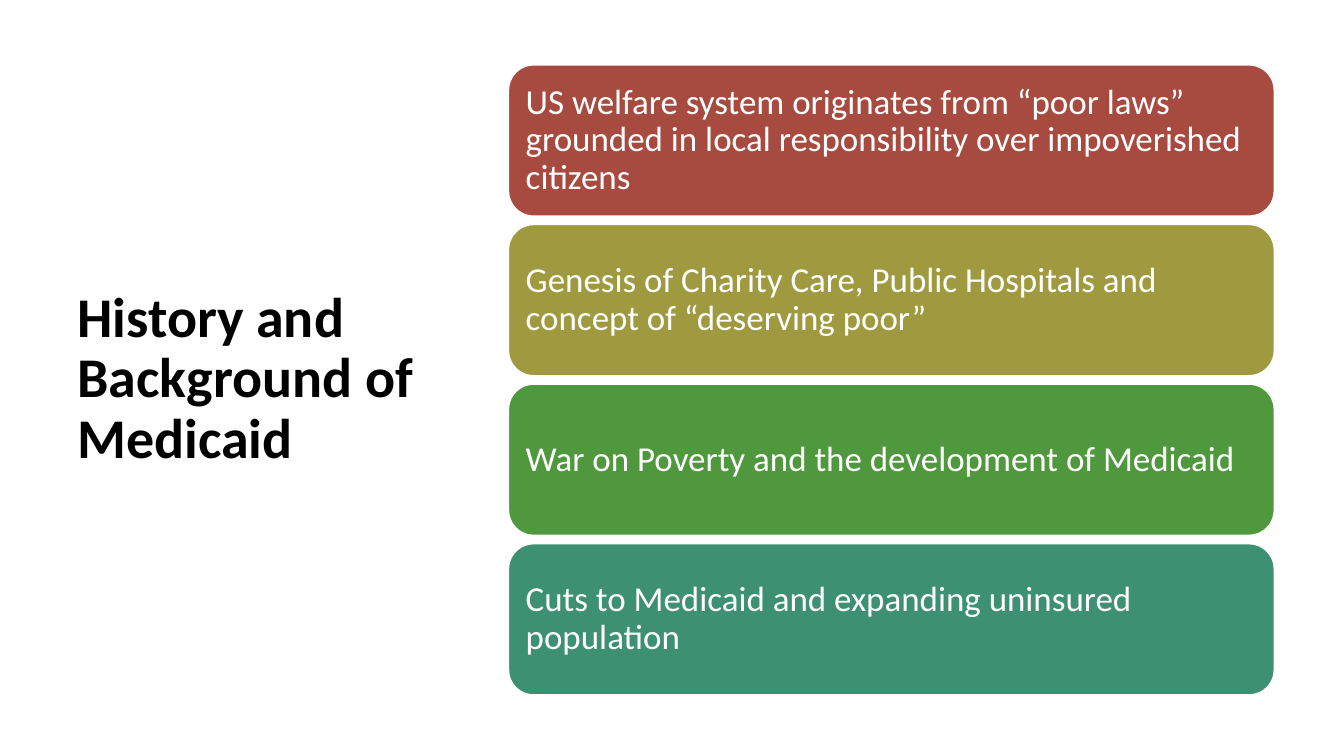
import pptx
import pptx.util
import pptx.dml.color
import pptx.enum.shapes
import pptx.enum.text

Pt = pptx.util.Pt
RGBColor = pptx.dml.color.RGBColor

FONT = "Calibri"
BLACK = RGBColor(0x00, 0x00, 0x00)
WHITE = RGBColor(0xFF, 0xFF, 0xFF)
RED = RGBColor(0xA7, 0x4B, 0x40)
OLIVE = RGBColor(0x9F, 0x9A, 0x3F)
GREEN = RGBColor(0x50, 0x98, 0x3E)
TEAL = RGBColor(0x3D, 0x90, 0x72)

MILESTONES = [
    ("US welfare system originates from “poor laws” grounded in local "
     "responsibility over impoverished citizens", RED),
    ("Genesis of Charity Care, Public Hospitals and concept of “deserving poor”", OLIVE),
    ("War on Poverty and the development of Medicaid", GREEN),
    ("Cuts to Medicaid and expanding uninsured population", TEAL),
]

# Column of milestone cards, in points
CARD_LEFT, CARD_TOP = 363.2, 46.4
CARD_WIDTH, CARD_HEIGHT = 547, 108
CARD_PITCH = 114


def write_text(frame, wording, size, color, bold=False):
    frame.word_wrap = True
    frame.auto_size = pptx.enum.text.MSO_AUTO_SIZE.NONE
    frame.vertical_anchor = pptx.enum.text.MSO_ANCHOR.MIDDLE
    paragraph = frame.paragraphs[0]
    paragraph.alignment = pptx.enum.text.PP_ALIGN.LEFT
    paragraph.line_spacing = 0.9
    run = paragraph.add_run()
    run.text = wording
    run.font.name = FONT
    run.font.size = Pt(size)
    run.font.bold = bold
    run.font.color.rgb = color


def set_heading(slide, wording):
    heading = slide.shapes.title
    heading.left, heading.top = Pt(48.2), Pt(43.2)
    heading.width, heading.height = Pt(275), Pt(456)
    write_text(heading.text_frame, wording, 40, BLACK, bold=True)


def add_milestone(slide, position, wording, color):
    card = slide.shapes.add_shape(
        pptx.enum.shapes.MSO_SHAPE.ROUNDED_RECTANGLE,
        Pt(CARD_LEFT), Pt(CARD_TOP + position * CARD_PITCH),
        Pt(CARD_WIDTH), Pt(CARD_HEIGHT))
    card.shadow.inherit = False
    card.fill.solid()
    card.fill.fore_color.rgb = color
    card.line.color.rgb = WHITE
    card.line.width = Pt(1)
    frame = card.text_frame
    frame.margin_left = frame.margin_right = Pt(7.2)
    frame.margin_top = frame.margin_bottom = Pt(7.2)
    write_text(frame, wording, 25, WHITE)


def main():
    deck = pptx.Presentation()
    deck.slide_width, deck.slide_height = Pt(960), Pt(540)
    slide = deck.slides.add_slide(deck.slide_layouts.get_by_name("Title Only"))

    # Heading on the left
    set_heading(slide, "History and Background of Medicaid")

    # Milestones on the right
    for position, (wording, color) in enumerate(MILESTONES):
        add_milestone(slide, position, wording, color)

    deck.save("out.pptx")


if __name__ == "__main__":
    main()
